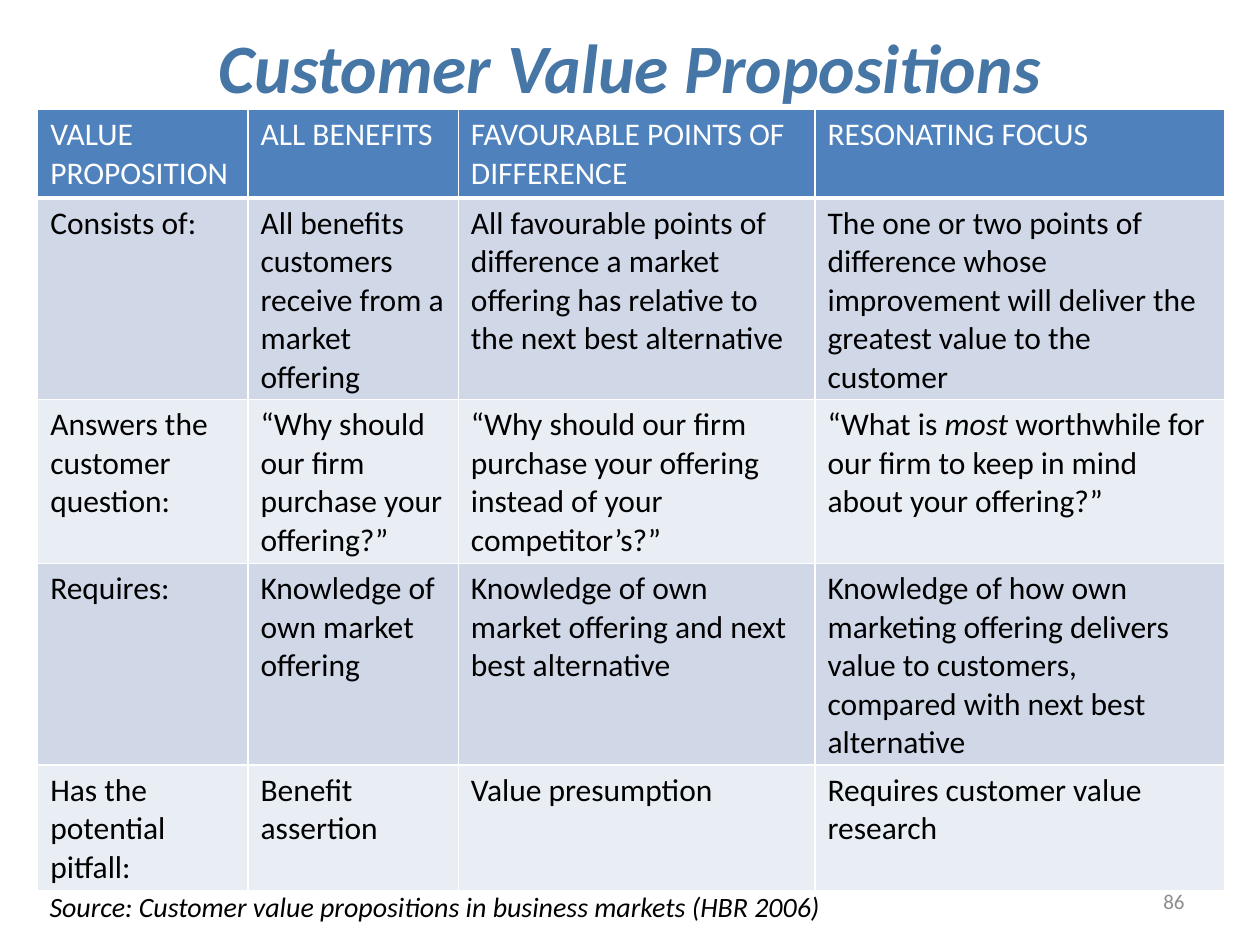
from dataclasses import dataclass

from lxml.etree import SubElement
from pptx import Presentation
from pptx.dml.color import RGBColor
from pptx.enum.text import MSO_ANCHOR, PP_ALIGN
from pptx.oxml.ns import qn
from pptx.util import Cm, Pt

# Content: a cell is a string, or a list of (text, italic) runs
HEADING = "Customer Value Propositions"
SOURCE = "Source: Customer value propositions in business markets (HBR 2006)"
PAGE_NUMBER = "86"
PROPOSITIONS = [
    ["VALUE PROPOSITION", "ALL BENEFITS", "FAVOURABLE POINTS OF DIFFERENCE",
     "RESONATING FOCUS"],
    ["Consists of:",
     "All benefits customers receive from a market offering",
     "All favourable points of difference a market offering has relative to "
     "the next best alternative",
     "The one or two points of difference whose improvement will deliver the "
     "greatest value to the customer"],
    ["Answers the customer question:",
     "“Why should our firm purchase your offering?”",
     "“Why should our firm purchase your offering instead of your competitor’s?”",
     [("“What is ", False), ("most", True),
      (" worthwhile for our firm to keep in mind about your offering?”", False)]],
    ["Requires:",
     "Knowledge of own market offering",
     "Knowledge of own market offering and next best alternative",
     "Knowledge of how own marketing offering delivers value to customers, "
     "compared with next best alternative"],
    ["Has the potential pitfall:", "Benefit assertion", "Value presumption",
     "Requires customer value research"],
]
COLUMN_WIDTHS = [4.24, 4.24, 7.19, 8.26]
ROW_HEIGHTS = [1.78, 4.06, 3.3, 4.06, 2.54]


@dataclass(frozen=True)
class Theme:
    font: str = "Calibri"
    heading: str = "4676A6"
    header: str = "4F81BD"
    bands: tuple = ("D0D8E8", "E9EDF4")
    white: str = "FFFFFF"
    text: str = "000000"
    muted: str = "8C8C8C"
    heading_size: float = 39.6
    cell_size: float = 18
    source_size: float = 16
    number_size: float = 12
    rule: float = 1
    header_rule: float = 3


THEME = Theme()


def style(paragraph, size, color, bold=False, italic=False):
    font = paragraph.font
    font.name, font.size, font.bold = THEME.font, Pt(size), bold
    font.color.rgb = RGBColor.from_string(color)
    if italic is not None:
        font.italic = italic


def add_label(slide, box, text, size, color, align, anchor=MSO_ANCHOR.MIDDLE,
              wrap=True, **emphasis):
    frame = slide.shapes.add_textbox(*(Cm(length) for length in box)).text_frame
    frame.word_wrap = wrap
    frame.vertical_anchor = anchor
    label = frame.paragraphs[0]
    label.text, label.alignment = text, align
    style(label, size, color, **emphasis)


def add_borders(cell, bottom):
    properties = cell._tc.get_or_add_tcPr()
    widths = {"lnL": THEME.rule, "lnR": THEME.rule, "lnT": THEME.rule, "lnB": bottom}
    for position, (side, width) in enumerate(widths.items()):
        line = SubElement(properties, qn(f"a:{side}"), w=str(Pt(width)))
        fill = SubElement(line, qn("a:solidFill"))
        SubElement(fill, qn("a:srgbClr"), val=THEME.white)
        properties.insert(position, line)  # borders come before the fill


def fill_cell(cell, content, row):
    is_header = row == 0
    background = THEME.header if is_header else THEME.bands[(row - 1) % 2]
    cell.fill.solid()
    cell.fill.fore_color.rgb = RGBColor.from_string(background)
    add_borders(cell, THEME.header_rule if is_header else THEME.rule)
    paragraph = cell.text_frame.paragraphs[0]
    if isinstance(content, str):
        paragraph.text = content
    else:
        for text, italic in content:
            run = paragraph.add_run()
            run.text, run.font.italic = text, italic
    style(paragraph, THEME.cell_size, THEME.white if is_header else THEME.text,
          italic=None)


def add_propositions(slide):
    table = slide.shapes.add_table(
        len(ROW_HEIGHTS), len(COLUMN_WIDTHS), Cm(0.76), Cm(2.21),
        Cm(sum(COLUMN_WIDTHS)), Cm(sum(ROW_HEIGHTS))).table
    for column, width in zip(table.columns, COLUMN_WIDTHS):
        column.width = Cm(width)
    for row, height in zip(table.rows, ROW_HEIGHTS):
        row.height = Cm(height)
    # Plain header text: the style's bold first row is switched off
    table.first_row = table.horz_banding = False
    for r, contents in enumerate(PROPOSITIONS):
        for c, content in enumerate(contents):
            fill_cell(table.cell(r, c), content, r)


def main():
    deck = Presentation()
    deck.slide_width, deck.slide_height = Cm(25.4), Cm(19.05)
    slide = deck.slides.add_slide(deck.slide_layouts[6])

    # Page number, heading and source line
    add_label(slide, (18.21, 17.65, 5.92, 1.02), PAGE_NUMBER, THEME.number_size,
              THEME.muted, PP_ALIGN.RIGHT)
    add_label(slide, (0.53, 0.43, 24.33, 1.78), HEADING, THEME.heading_size,
              THEME.heading, PP_ALIGN.CENTER, bold=True, italic=True)
    add_label(slide, (0.56, 17.81, 16.41, 0.94), SOURCE, THEME.source_size,
              THEME.text, PP_ALIGN.CENTER, MSO_ANCHOR.TOP, wrap=False, italic=True)

    # Comparison table
    add_propositions(slide)
    deck.save("out.pptx")


if __name__ == "__main__":
    main()
